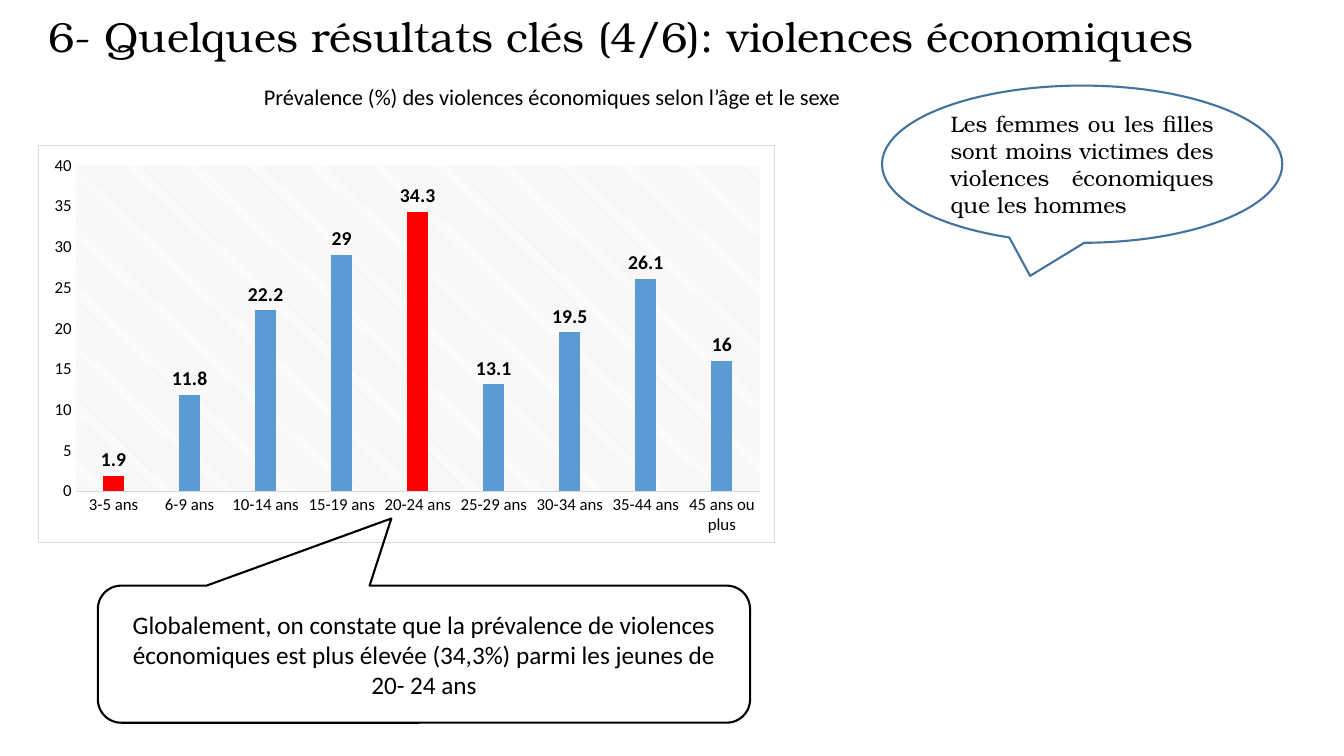
"""Build the slide on economic violence by age: title, caption, column chart and two callouts."""
import dataclasses
import typing

import pptx
import pptx.chart.data
import pptx.dml.color
import pptx.enum.chart
import pptx.enum.shapes
import pptx.enum.text
import pptx.oxml
import pptx.oxml.ns
import pptx.util

SLIDE_WIDTH = pptx.util.Inches(13.33)
SLIDE_HEIGHT = pptx.util.Inches(7.5)
BLANK_LAYOUT = 6
SERIF = "TeX Gyre Bonum"
SANS = "Calibri"
BLACK, WHITE, GREY = "000000", "FFFFFF", "D9D9D9"
BLUE, RED, OUTLINE_BLUE = "5B9BD5", "FF0000", "43739E"
ALIGN = pptx.enum.text.PP_ALIGN
SHAPE = pptx.enum.shapes.MSO_SHAPE

PREVALENCE = {
    "3-5 ans": 1.9,
    "6-9 ans": 11.8,
    "10-14 ans": 22.2,
    "15-19 ans": 29,
    "20-24 ans": 34.3,
    "25-29 ans": 13.1,
    "30-34 ans": 19.5,
    "35-44 ans": 26.1,
    "45 ans ou plus": 16,
}
EXTREMES = (min(PREVALENCE, key=PREVALENCE.get), max(PREVALENCE, key=PREVALENCE.get))


class Box(typing.NamedTuple):
    """Left, top, width and height as percentages of the slide."""

    left: float
    top: float
    width: float
    height: float

    def lengths(self) -> tuple[int, int, int, int]:
        """Return the box in slide units."""
        sizes = (SLIDE_WIDTH, SLIDE_HEIGHT) * 2
        return tuple(round(share * size / 100) for share, size in zip(self, sizes))


@dataclasses.dataclass(frozen=True)
class Text:
    """A piece of text with its place and format."""

    box: Box
    wording: str
    size: float
    font: str
    alignment: ALIGN = ALIGN.LEFT
    line_spacing: float = 1.0


@dataclasses.dataclass(frozen=True)
class Callout:
    """A speech bubble with its outline and pointer."""

    text: Text
    preset: SHAPE
    adjustments: tuple[float, ...]
    outline: str


TITLE = Text(Box(2.85, 2.13, 91.35, 6.13),
             "6- Quelques résultats clés (4/6): violences économiques", 30, SERIF, line_spacing=0.9)
CAPTION = Text(Box(18.9, 10.13, 49.8, 5.6),
               "Prévalence (%) des violences économiques selon l’âge et le sexe", 16, SANS, line_spacing=0.9)
CHART_BOX = Box(2.85, 19.2, 54.83, 52.67)
GENDER_CALLOUT = Callout(
    Text(Box(65.63, 11.33, 29.78, 20.8),
         "Les femmes ou les filles sont moins victimes des violences économiques que les hommes",
         16, SERIF, ALIGN.JUSTIFY),
    SHAPE.OVAL_CALLOUT, (-0.13, 0.71), OUTLINE_BLUE)
AGE_CALLOUT = Callout(
    Text(Box(7.28, 77.47, 48.53, 18.13),
         "Globalement, on constate que la prévalence de violences économiques est plus élevée "
         "(34,3%) parmi les jeunes de 20- 24 ans",
         18, SANS, ALIGN.CENTER),
    SHAPE.ROUNDED_RECTANGULAR_CALLOUT, (-0.05, -0.99, 0.17), BLACK)


def color(value: str) -> pptx.dml.color.RGBColor:
    """Turn a hex string into a colour."""
    return pptx.dml.color.RGBColor.from_string(value)


def apply(target: typing.Any, formats: dict[str, typing.Any]) -> None:
    """Set every attribute in the format values."""
    for name, value in formats.items():
        setattr(target, name, value)


def format_font(font: typing.Any, name: str, size: float, bold: bool = False) -> None:
    """Give a font its face, size, weight and black colour."""
    apply(font, {"name": name, "size": pptx.util.Pt(size), "bold": bold})
    font.color.rgb = color(BLACK)


def write_text(shape: typing.Any, text: Text) -> None:
    """Write one formatted paragraph into a shape."""
    apply(shape.text_frame, {"word_wrap": True, "vertical_anchor": pptx.enum.text.MSO_ANCHOR.MIDDLE})
    paragraph = shape.text_frame.paragraphs[0]
    apply(paragraph, {"alignment": text.alignment, "line_spacing": text.line_spacing})
    run = paragraph.add_run()
    run.text = text.wording
    format_font(run.font, text.font, text.size)


def draw_text(slide: typing.Any, text: Text) -> None:
    """Draw a plain text box."""
    write_text(slide.shapes.add_textbox(*text.box.lengths()), text)


def draw_callout(slide: typing.Any, callout: Callout) -> None:
    """Draw an outlined speech bubble."""
    shape = slide.shapes.add_shape(callout.preset, *callout.text.box.lengths())
    for index, value in enumerate(callout.adjustments):
        shape.adjustments[index] = value
    shape.shadow.inherit = False
    shape.fill.background()
    shape.line.color.rgb = color(callout.outline)
    shape.line.width = pptx.util.Pt(1.5)
    write_text(shape, callout.text)


def style_chart_areas(chart: typing.Any) -> None:
    """Place the plot and fill the plot and chart areas."""
    names = pptx.oxml.ns.nsdecls("c", "a")
    frame = chart.element.find(pptx.oxml.ns.qn("c:chart"))
    plot_area = frame.find(pptx.oxml.ns.qn("c:plotArea"))
    for layout in plot_area.findall(pptx.oxml.ns.qn("c:layout")):
        plot_area.remove(layout)
    shares = "".join(f'<c:{key} val="{value}"/>'
                     for key, value in {"x": 0.05, "y": 0.05, "w": 0.93, "h": 0.82}.items())
    plot_area.insert(0, pptx.oxml.parse_xml(
        f'<c:layout {names}><c:manualLayout><c:layoutTarget val="inner"/>'
        f'<c:xMode val="edge"/><c:yMode val="edge"/>{shares}</c:manualLayout></c:layout>'))
    plot_area.append(pptx.oxml.parse_xml(
        f'<c:spPr {names}><a:pattFill prst="ltDnDiag"><a:fgClr><a:srgbClr val="{GREY}"/></a:fgClr>'
        f'<a:bgClr><a:srgbClr val="{WHITE}"/></a:bgClr></a:pattFill><a:ln><a:noFill/></a:ln></c:spPr>'))
    frame.addnext(pptx.oxml.parse_xml(
        f'<c:spPr {names}><a:solidFill><a:srgbClr val="{WHITE}"/></a:solidFill>'
        f'<a:ln w="{pptx.util.Pt(0.75)}"><a:solidFill><a:srgbClr val="{GREY}"/></a:solidFill></a:ln></c:spPr>'))


def draw_chart(slide: typing.Any) -> None:
    """Draw the prevalence columns with the extremes highlighted."""
    data = pptx.chart.data.CategoryChartData()
    data.categories = list(PREVALENCE)
    data.add_series("Series 1", list(PREVALENCE.values()))
    chart = slide.shapes.add_chart(
        pptx.enum.chart.XL_CHART_TYPE.COLUMN_CLUSTERED, *CHART_BOX.lengths(), data).chart
    apply(chart, {"has_title": False, "has_legend": False})
    format_font(chart.font, SANS, 12)
    no_tick = pptx.enum.chart.XL_TICK_MARK.NONE
    for axis in (chart.category_axis, chart.value_axis):
        apply(axis, {"major_tick_mark": no_tick, "minor_tick_mark": no_tick, "has_major_gridlines": False})
        format_font(axis.tick_labels.font, SANS, 12)
    apply(chart.value_axis, {"minimum_scale": 0, "maximum_scale": 40, "major_unit": 5})
    chart.value_axis.format.line.fill.background()
    chart.category_axis.format.line.color.rgb = color(GREY)
    chart.category_axis.format.line.width = pptx.util.Pt(0.75)
    plot = chart.plots[0]
    apply(plot, {"gap_width": 267, "overlap": -43, "vary_by_categories": False, "has_data_labels": True})
    apply(plot.data_labels, {"show_value": True,
                             "position": pptx.enum.chart.XL_LABEL_POSITION.OUTSIDE_END})
    format_font(plot.data_labels.font, SANS, 14, bold=True)
    series = plot.series[0]
    series.format.fill.solid()
    series.format.fill.fore_color.rgb = color(BLUE)
    for index, age in enumerate(PREVALENCE):
        if age in EXTREMES:
            fill = series.points[index].format.fill
            fill.solid()
            fill.fore_color.rgb = color(RED)
    style_chart_areas(chart)


def main() -> None:
    """Build and save the presentation."""
    presentation = pptx.Presentation()
    apply(presentation, {"slide_width": SLIDE_WIDTH, "slide_height": SLIDE_HEIGHT})
    slide = presentation.slides.add_slide(presentation.slide_layouts[BLANK_LAYOUT])
    draw_text(slide, TITLE)
    draw_callout(slide, GENDER_CALLOUT)
    draw_text(slide, CAPTION)
    draw_chart(slide)
    draw_callout(slide, AGE_CALLOUT)
    presentation.save("out.pptx")


if __name__ == "__main__":
    main()
